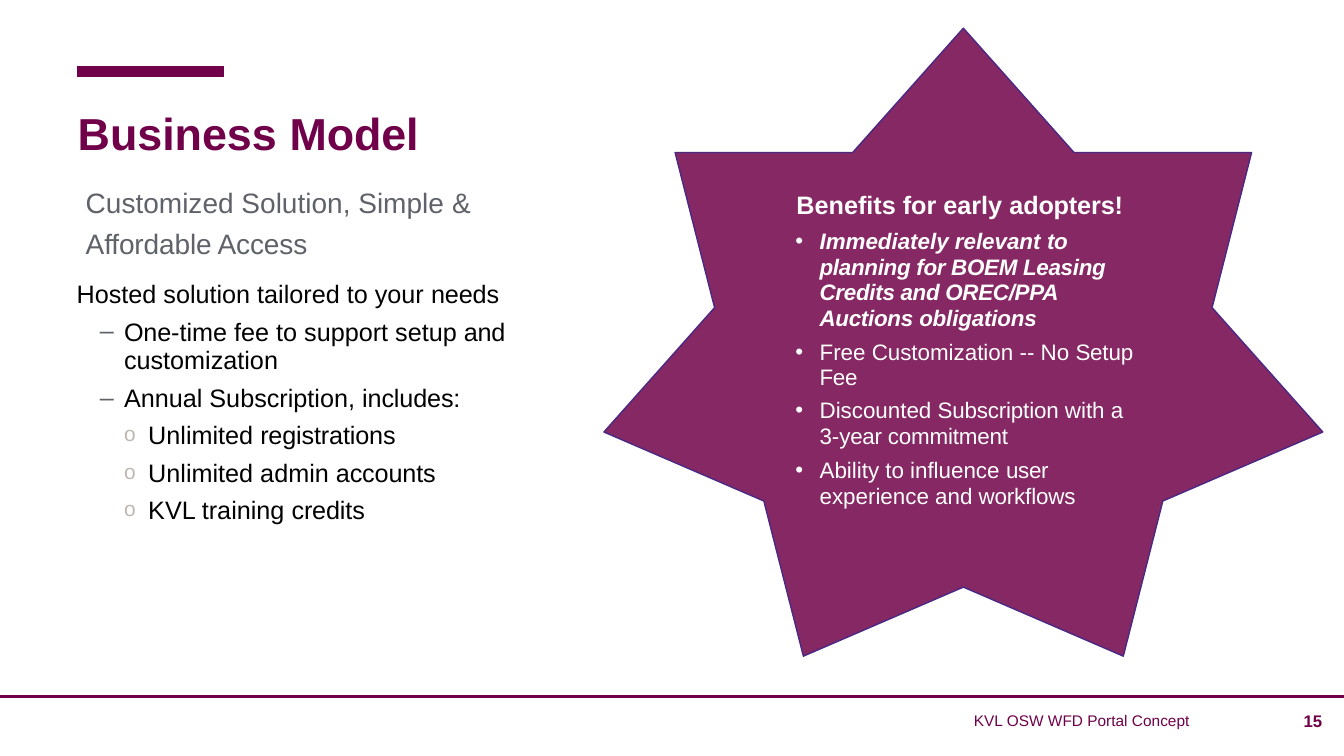
import pptx
import pptx.util
import pptx.dml.color
import pptx.enum.shapes
import pptx.enum.text
import pptx.oxml.ns
import lxml.etree
from dataclasses import dataclass

PX = 9144


@dataclass(frozen=True)
class Theme:
    font: str = "Arial"
    plum: str = "70004A"
    star: str = "852863"
    edge: str = "4A2884"
    gray: str = "5F6269"
    pale: str = "BDB7B3"
    ink: str = "000000"
    white: str = "FFFFFF"
    title: int = 32
    lead: int = 20
    body: int = 18
    item: int = 16
    page: int = 12
    foot: int = 11


THEME = Theme()


def px(size):
    return pptx.util.Emu(size * PX)


def color(code):
    return pptx.dml.color.RGBColor.from_string(code)


def add_node(parent, tag, **attrs):
    node = lxml.etree.SubElement(parent, pptx.oxml.ns.qn(tag))
    for key, value in attrs.items():
        node.set(key, str(value))
    return node


def add_rule(slide, left, right, top, weight):
    line = slide.shapes.add_connector(
        pptx.enum.shapes.MSO_CONNECTOR.STRAIGHT,
        px(left), px(top), px(right), px(top))
    line.line.color.rgb = color(THEME.plum)
    line.line.width = pptx.util.Pt(weight)
    add_node(line._element.spPr, "a:effectLst")


def add_star(slide, left, top, width, height):
    star = slide.shapes.add_shape(
        pptx.enum.shapes.MSO_SHAPE.STAR_7_POINT,
        px(left), px(top), px(width), px(height))
    star.shadow.inherit = False
    star.fill.solid()
    star.fill.fore_color.rgb = color(THEME.star)
    star.line.color.rgb = color(THEME.edge)
    star.line.width = pptx.util.Pt(1)


def add_box(slide, left, top, width, height, inset=0):
    box = slide.shapes.add_textbox(px(left), px(top), px(width), px(height))
    frame = box.text_frame
    frame.word_wrap = True
    frame.auto_size = pptx.enum.text.MSO_AUTO_SIZE.SHAPE_TO_FIT_TEXT
    frame.margin_left = frame.margin_right = frame.margin_bottom = 0
    frame.margin_top = px(inset)
    return frame


def add_para(frame, runs, size, ink, left=0, hang=0, before=0, line=None,
             mark=None, tint=None, scale=100, bold=False, slant=False):
    para = frame.paragraphs[0]
    if para.runs:
        para = frame.add_paragraph()
    para.space_before = pptx.util.Pt(before)
    if line:
        para.line_spacing = pptx.util.Pt(line)
    props = para._p.get_or_add_pPr()
    props.set("marL", str(px(left)))
    props.set("indent", str(px(-hang)))
    if mark:
        add_node(add_node(props, "a:buClr"), "a:srgbClr", val=tint or ink)
        add_node(props, "a:buSzPct", val=scale * 1000)
        add_node(props, "a:buFont", typeface=THEME.font)
        add_node(props, "a:buChar", char=mark)
    for text, track in runs:
        run = para.add_run()
        run.text = text
        run.font.name = THEME.font
        run.font.size = pptx.util.Pt(size)
        run.font.bold = bold
        run.font.italic = slant
        run.font.color.rgb = color(ink)
        run._r.get_or_add_rPr().set("spc", str(track))


def add_offer(slide):
    frame = add_box(slide, 75, 171, 508, 357, 5)
    add_para(frame, [("Customized Solution, Simple ", 0), ("& ", -50),
                     ("Affordable Access", -10)],
             THEME.lead, THEME.gray, left=10, before=3.4, line=29.6)
    add_para(frame, [("Hosted solution tailored to your ", 0), ("needs", -10)],
             THEME.body, THEME.ink, left=1, before=12.9)
    fees = [
        [("One-", -10), ("time fee to support setup ", 0), ("and ", -20),
         ("customization", 0)],
        [("Annual Subscription, ", 0), ("includes:", -10)],
    ]
    for runs in fees:
        add_para(frame, runs, THEME.body, THEME.ink, left=48, hang=24,
                 before=6.5, line=20.5, mark="–", tint=THEME.gray)
    perks = [("Unlimited ", "registrations"),
             ("Unlimited admin ", "accounts"),
             ("KVL training ", "credits")]
    for start, end in perks:
        add_para(frame, [(start, 0), (end, -10)], THEME.body, THEME.ink,
                 left=72, hang=24, before=5, mark="o", tint=THEME.pale,
                 scale=83)


def add_gains(slide):
    frame = add_box(slide, 788, 179, 347, 329, 9)
    add_para(frame, [("Benefits for early ", 0), ("adopters!", -10)],
             THEME.body, THEME.white, left=2, before=6.8, bold=True)
    gains = [
        (6.5, 18.2, True,
         [("Immediately relevant ", 0),
          ("to planning for BOEM Leasing Credits and OREC/PPA Auctions ", -20),
          ("obligations", -10)]),
        (6.2, 18.2, False,
         [("Free Customization ", 0), ("-", -20), ("- No ", 0),
          ("Setup ", -10), ("Fee", -20)]),
        (4.6, 18.7, False,
         [("Discounted ", 0), ("Subscription ", -10), ("with a ", 0),
          ("3-", -10), ("year ", -20), ("commitment", -10)]),
        (6.1, 18.2, False,
         [("Ability to influence ", 0), ("user ", -20),
          ("experience and ", 0), ("workflows", -10)]),
    ]
    for before, line, strong, runs in gains:
        add_para(frame, runs, THEME.item, THEME.white, left=25, hang=24,
                 before=before, line=line, mark="•", bold=strong, slant=strong)


def main():
    deck = pptx.Presentation()
    deck.slide_width = px(1333)
    deck.slide_height = px(750)
    slide = deck.slides.add_slide(deck.slide_layouts[6])
    add_rule(slide, 0, 1333, 691, 2)
    add_rule(slide, 76, 222, 71, 8)
    add_offer(slide)
    title = add_box(slide, 68, 89, 1189, 70, 16)
    add_para(title, [("Business ", 0), ("Model", -10)], THEME.title,
             THEME.plum, left=9, before=1.1, bold=True)
    add_star(slide, 599, 28, 713, 623)
    add_gains(slide)
    page = add_box(slide, 1289, 705, 28, 20)
    add_para(page, [("15", -20)], THEME.page, THEME.plum, left=4, line=14.2,
             bold=True)
    foot = add_box(slide, 965, 706, 257, 20)
    add_para(foot, [("KVL OSW WFD Portal Concept", 0)], THEME.foot,
             THEME.plum, left=1)
    deck.save("out.pptx")


if __name__ == "__main__":
    main()
